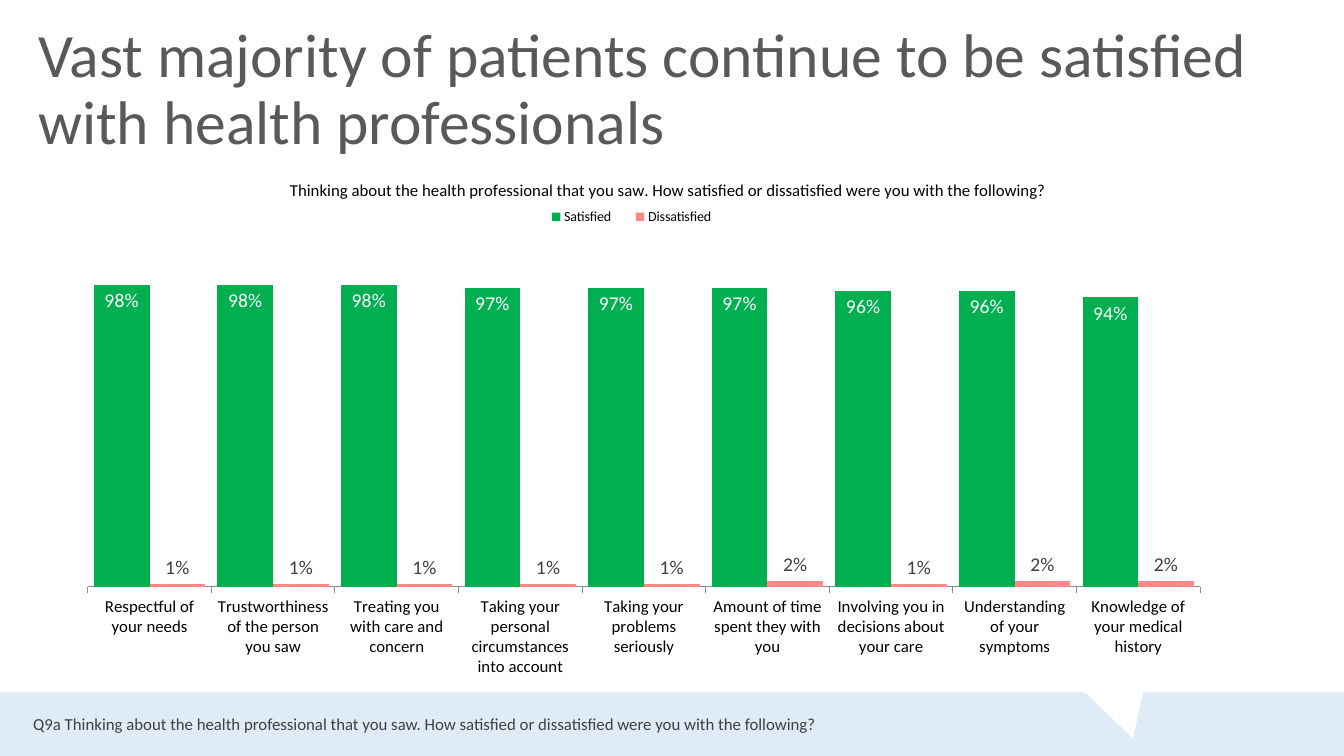
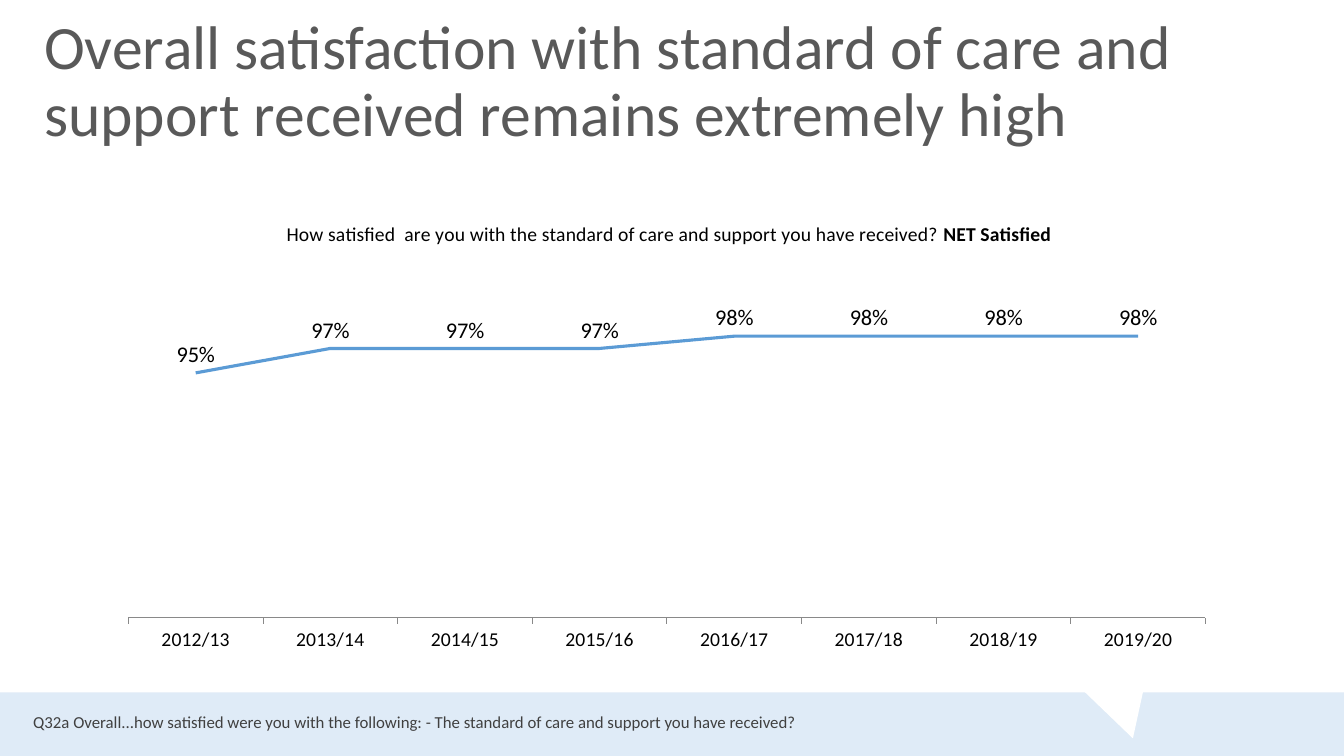
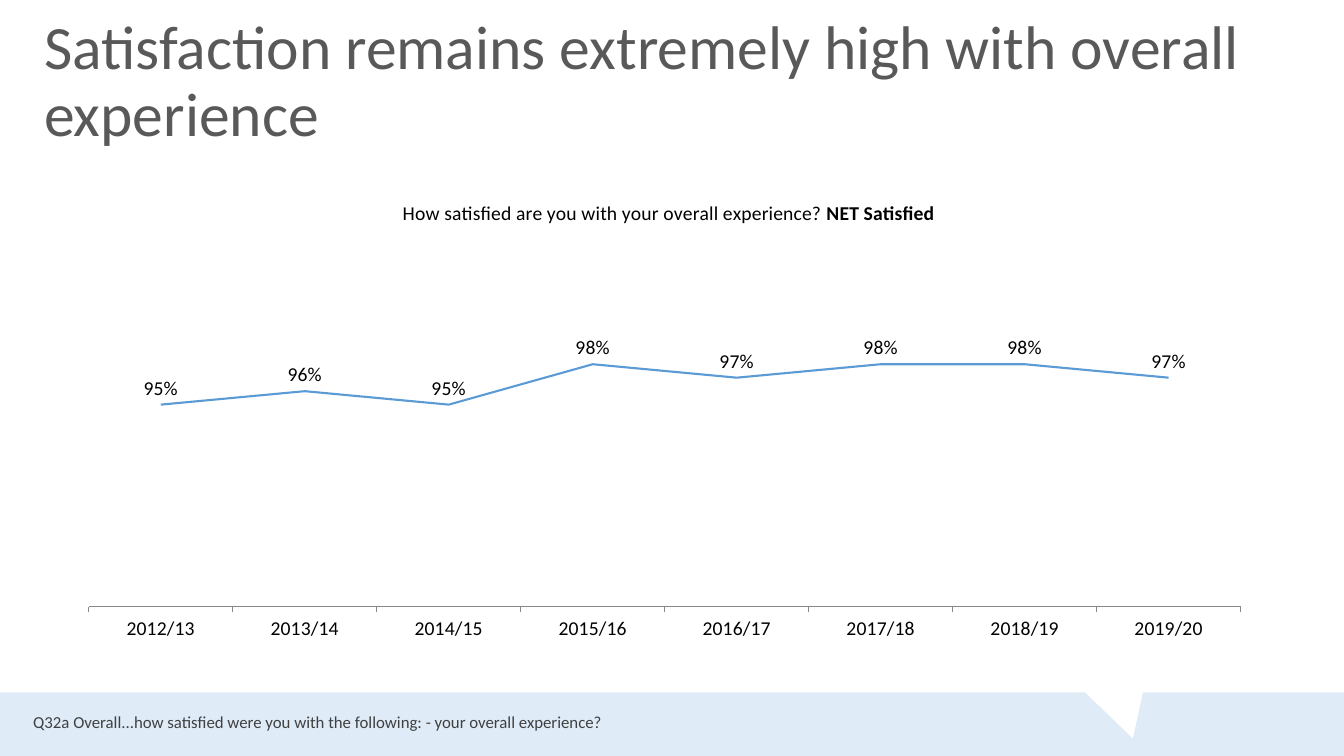
from dataclasses import dataclass

from lxml import etree
from pptx import Presentation
from pptx import util as u
from pptx.chart.data import CategoryChartData
from pptx.dml.color import RGBColor
from pptx.enum import chart as ch
from pptx.enum import shapes, text
from pptx.oxml.ns import qn

Box = tuple[float, float, float, float]

WIDE, HIGH = u.Inches(13.33), u.Inches(7.5)
FONT = "Calibri"
HUES = {
    "band": "DFEBF7", "notch": "FFFFFF", "title": "595959", "note": "404040",
    "text": "000000", "axis": "898989", "line": "5B9BD5",
    "good": "00B050", "bad": "FF8989", "light": "FFFFFF",
}
YEARS = [f"{y}/{y - 1999}" for y in range(2019, 2011, -1)]
ABOVE = ch.XL_LABEL_POSITION.ABOVE


@dataclass
class Series:
    name: str
    vals: list[int]
    hue: str
    ink: str = "text"
    spot: ch.XL_LABEL_POSITION = ABOVE


@dataclass
class Graph:
    """Boxes and spots are percentages; those inside the chart are of the chart."""
    box: Box
    kind: ch.XL_CHART_TYPE
    ask: str
    bold: str
    spot: tuple[float, float]
    plot: Box
    low: float
    top: float
    cats: list[str]
    rows: list[Series]
    cat_size: int = 14
    tag_size: int = 14
    thick: float = 2.25
    key: Box | None = None


@dataclass
class Page:
    title: str
    left: float
    top: float
    note: str
    base: float
    graph: Graph


PAGES = [
    Page(
        "Vast majority of patients continue to be satisfied with health professionals",
        2.1, 2.4,
        "Q9a Thinking about the health professional that you saw. "
        "How satisfied or dissatisfied were you with the following?", 93.73,
        Graph(
            (5.33, 21.73, 92.57, 67.73), ch.XL_CHART_TYPE.COLUMN_CLUSTERED,
            "Thinking about the health professional that you saw. "
            "How satisfied or dissatisfied were you with the following?", "",
            (17.3, 2.3), (1.3, 10.4, 89.4, 72.5), 0, 1.2,
            ["Respectful of your needs", "Trustworthiness of the person you saw",
             "Treating you with care and concern",
             "Taking your personal circumstances into account",
             "Taking your problems seriously", "Amount of time spent they with you",
             "Involving you in decisions about your care",
             "Understanding of your symptoms", "Knowledge of your medical history"],
            [Series("Satisfied", [98, 98, 98, 97, 97, 97, 96, 96, 94], "good",
                    "light", ch.XL_LABEL_POSITION.INSIDE_END),
             Series("Dissatisfied", [1, 1, 1, 1, 1, 2, 1, 2, 2], "bad",
                    "note", ch.XL_LABEL_POSITION.OUTSIDE_END)],
            cat_size=12, key=(37, 7.8, 16, 5))),
    Page(
        "Overall satisfaction with standard of care and support received "
        "remains extremely high", 2.55, 1.33,
        "Q32a Overall...how satisfied were you with the following: "
        "- The standard of care and support you have received?", 93.47,
        Graph(
            (8.4, 26.13, 82.45, 60.67), ch.XL_CHART_TYPE.LINE,
            "How satisfied  are you with the standard of care and support "
            "you have received? ", "NET Satisfied",
            (15.4, 4.3), (1.4, 24.9, 97.2, 66.7), 0.75, 1, YEARS,
            [Series("Series 1", [98, 98, 98, 98, 97, 97, 97, 95], "line")],
            tag_size=16)),
    Page(
        "Satisfaction remains extremely high with overall experience", 2.55, 1.33,
        "Q32a Overall...how satisfied were you with the following: "
        "- your overall experience?", 93.47,
        Graph(
            (4.73, 23.2, 89.65, 64.53), ch.XL_CHART_TYPE.LINE,
            "How satisfied are you with your overall experience? ", "NET Satisfied",
            (27.9, 4.4), (2.1, 19.4, 95.6, 69), 0.8, 1.05, YEARS,
            [Series("Series 1", [97, 98, 98, 97, 98, 95, 96, 95], "line")],
            thick=1.5)),
]


def rgb(hue: str) -> RGBColor:
    return RGBColor.from_string(HUES[hue])


def place(box: Box) -> list[int]:
    """Turn percentages of the slide into lengths."""
    return [round(part * full / 100) for part, full in zip(box, (WIDE, HIGH) * 2)]


def style(font, size: float, hue: str, bold: bool = False) -> None:
    font.name, font.size, font.bold = FONT, u.Pt(size), bold
    font.color.rgb = rgb(hue)


def block(slide, kind: shapes.MSO_SHAPE, box: Box, hue: str, turn: float = 0) -> None:
    shape = slide.shapes.add_shape(kind, *place(box))
    shape.shadow.inherit = False
    shape.fill.solid()
    shape.fill.fore_color.rgb = rgb(hue)
    shape.line.fill.background()
    shape.rotation = turn


def write(slide, box: Box, words: str, size: float, hue: str,
          anchor: text.MSO_ANCHOR, gap: float = 1) -> None:
    frame = slide.shapes.add_textbox(*place(box)).text_frame
    frame.word_wrap = True
    frame.vertical_anchor = anchor
    frame.text = words
    para = frame.paragraphs[0]
    para.line_spacing = gap
    style(para.runs[0].font, size, hue)


def pin(chart, name: str, spot: tuple[float, ...], prior: str = "") -> None:
    """Fix a chart part at percentages of the chart, after its child named prior."""
    part = chart.element.xpath(f"c:chart/{name}")[0]
    for old in part.findall(qn("c:layout")):
        part.remove(old)
    frame = etree.Element(qn("c:layout"))
    hand = etree.SubElement(frame, qn("c:manualLayout"))
    rules = [("xMode", "edge"), ("yMode", "edge")]
    if name == "c:plotArea":
        rules.insert(0, ("layoutTarget", "inner"))
    rules += [(axis, f"{val / 100:.3f}") for axis, val in zip("xywh", spot)]
    for tag, val in rules:
        etree.SubElement(hand, qn(f"c:{tag}")).set("val", val)
    part.insert(part.index(part.find(qn(prior))) + 1 if prior else 0, frame)


def paint(row, spec: Series, graph: Graph) -> None:
    if graph.kind == ch.XL_CHART_TYPE.LINE:
        row.smooth = False
        row.format.line.color.rgb = rgb(spec.hue)
        row.format.line.width = u.Pt(graph.thick)
    else:
        row.format.fill.solid()
        row.format.fill.fore_color.rgb = rgb(spec.hue)
    tags = row.data_labels
    tags.show_value = True
    tags.number_format, tags.number_format_is_linked = "0%", False
    tags.position = spec.spot
    style(tags.font, graph.tag_size, spec.ink)


def head(chart, graph: Graph) -> None:
    chart.has_title = True
    para = chart.chart_title.text_frame.paragraphs[0]
    para.text = graph.ask
    if graph.bold:
        para.add_run().text = graph.bold
    for run in para.runs:
        style(run.font, graph.cat_size, "text", run.text == graph.bold)
    pin(chart, "c:title", graph.spot, "c:tx")


def axes(chart, graph: Graph) -> None:
    cat, val = chart.category_axis, chart.value_axis
    cat.major_tick_mark = ch.XL_TICK_MARK.OUTSIDE
    cat.has_major_gridlines = val.has_major_gridlines = False
    cat.reverse_order = graph.cats is YEARS
    cat.format.line.color.rgb = rgb("axis")
    cat.format.line.width = u.Pt(0.75)
    style(cat.tick_labels.font, graph.cat_size, "text")
    val.minimum_scale, val.maximum_scale = graph.low, graph.top
    val.visible = False


def draw(slide, graph: Graph) -> None:
    data = CategoryChartData(number_format="0%")
    data.categories = graph.cats
    for spec in graph.rows:
        data.add_series(spec.name, [val / 100 for val in spec.vals])
    chart = slide.shapes.add_chart(graph.kind, *place(graph.box), data).chart
    style(chart.font, 10, "text")
    head(chart, graph)
    axes(chart, graph)
    plot = chart.plots[0]
    plot.vary_by_categories = False
    if graph.kind == ch.XL_CHART_TYPE.COLUMN_CLUSTERED:
        plot.gap_width, plot.overlap = 22, 0
    for row, spec in zip(plot.series, graph.rows):
        paint(row, spec, graph)
    pin(chart, "c:plotArea", graph.plot)
    chart.has_legend = graph.key is not None
    if graph.key:
        chart.legend.position = ch.XL_LEGEND_POSITION.RIGHT
        chart.legend.include_in_layout = False
        style(chart.legend.font, 10, "text")
        pin(chart, "c:legend", graph.key, "c:legendPos")


def build(deck, page: Page) -> None:
    slide = deck.slides.add_slide(deck.slide_layouts[6])
    block(slide, shapes.MSO_SHAPE.RECTANGLE, (0, 91.6, 100, 8.4), "band")
    block(slide, shapes.MSO_SHAPE.ISOSCELES_TRIANGLE,
          (80.65, 88.67, 5.78, 9.2), "notch", 163.1)
    write(slide, (page.left, page.top, 94.75, 19.33), page.title, 44, "title",
          text.MSO_ANCHOR.MIDDLE, 0.9)
    draw(slide, page.graph)
    write(slide, (1.73, page.base, 78.77, 4), page.note, 12, "note",
          text.MSO_ANCHOR.TOP)


def main() -> None:
    deck = Presentation()
    deck.slide_width, deck.slide_height = WIDE, HIGH
    for page in PAGES:
        build(deck, page)
    deck.save("out.pptx")


if __name__ == "__main__":
    main()
